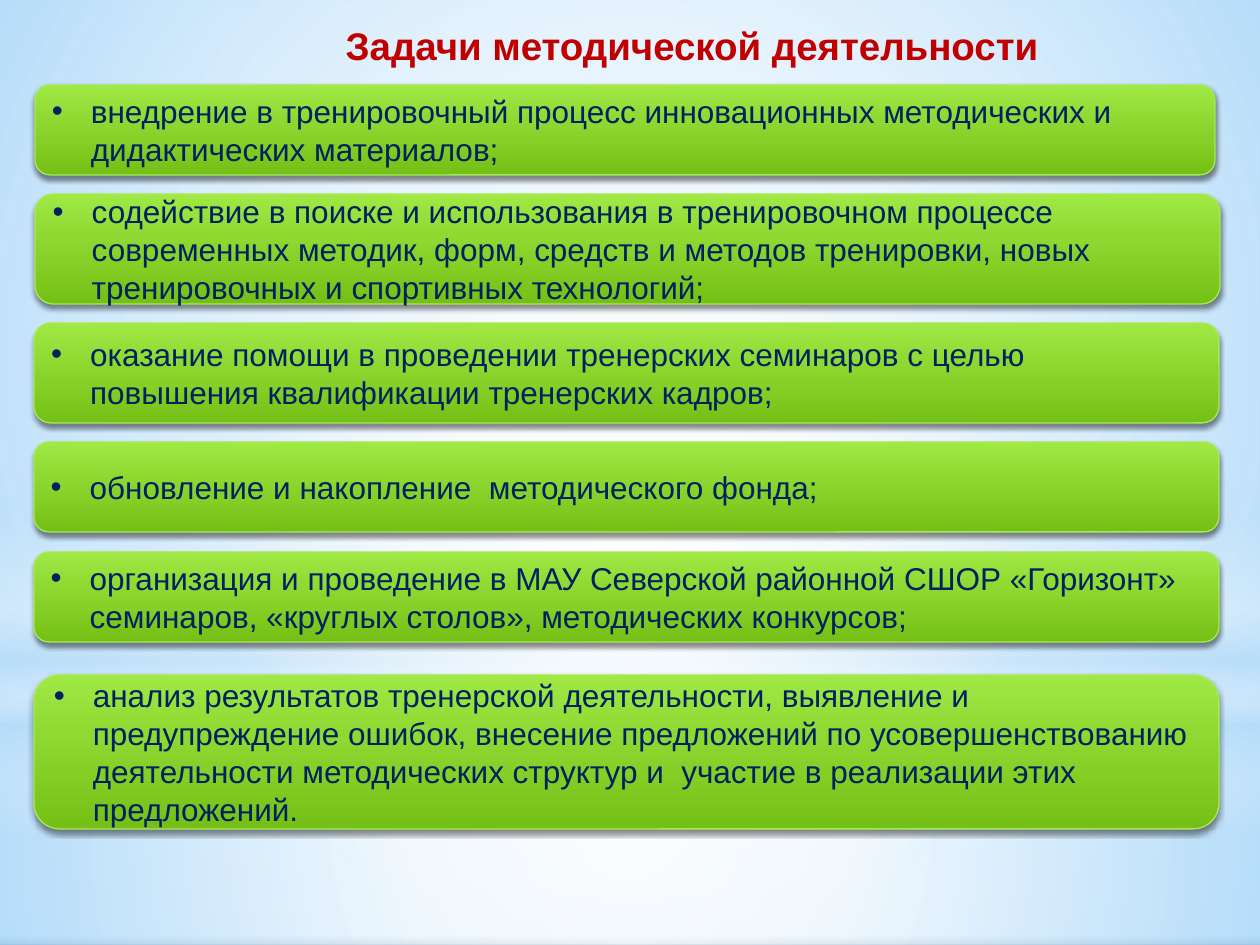
import pptx
import pptx.util
import pptx.dml.color
import pptx.enum.shapes
import pptx.enum.text
import pptx.oxml
import pptx.oxml.ns

qn = pptx.oxml.ns.qn
NS = pptx.oxml.ns.nsdecls("a")
KIND = pptx.enum.shapes.MSO_SHAPE
ALIGN = pptx.enum.text.PP_ALIGN
ANCHOR = pptx.enum.text.MSO_ANCHOR
W, H = 1260, 945

# left, top, width, height, text
TASKS = [
    (35, 85, 1180, 90, "внедрение в тренировочный процесс инновационных "
     "методических и дидактических материалов;"),
    (35, 194, 1185, 110, "содействие в поиске и использования в тренировочном "
     "процессе современных методик, форм, средств и методов тренировки, "
     "новых тренировочных и спортивных технологий;"),
    (34, 323, 1185, 100, "оказание помощи в проведении тренерских семинаров "
     "с целью повышения квалификации тренерских кадров;"),
    (34, 442, 1185, 90, "обновление и накопление  методического фонда;"),
    (34, 552, 1185, 90, "организация и проведение в МАУ Северской районной "
     "СШОР «Горизонт» семинаров, «круглых столов», методических конкурсов;"),
    (34, 675, 1185, 154, "анализ результатов тренерской деятельности, "
     "выявление и предупреждение ошибок, внесение предложений по "
     "усовершенствованию деятельности методических структур и  участие "
     "в реализации этих предложений."),
]


def px(n):
    return pptx.util.Emu(round(n * 914400 / 126))


def color(code):
    return pptx.dml.color.RGBColor.from_string(code)


def blend(fill, props, stops, round_=False):
    """Give props a gradient of (position, colour, opacity) stops in percent."""
    fill.solid()
    marks = "".join(
        f'<a:gs pos="{pos * 1000}"><a:srgbClr val="{code}">'
        f'<a:alpha val="{alpha * 1000}"/></a:srgbClr></a:gs>'
        for pos, code, alpha in stops)
    if round_:
        way = ('<a:path path="circle"><a:fillToRect l="50000" t="50000" '
               'r="50000" b="50000"/></a:path>')
    else:
        way = '<a:lin ang="5400000" scaled="0"/>'
    grad = pptx.oxml.parse_xml(
        f'<a:gradFill {NS} rotWithShape="1"><a:gsLst>{marks}</a:gsLst>'
        f'{way}</a:gradFill>')
    props.replace(props.find(qn("a:solidFill")), grad)


def shape(slide, kind, box, stops, round_=False):
    item = slide.shapes.add_shape(kind, *map(px, box))
    blend(item.fill, item.element.spPr, stops, round_)
    item.shadow.inherit = False
    return item


def scene(slide):
    """Draw the sky-blue backdrop."""
    back = slide.background.fill
    back.solid()
    blend(back, slide.element.find(".//" + qn("p:bgPr")),
          [(99, "B9DEFA", 100), (100, "6696BB", 100)])
    white, blue = "FFFFFF", "B4DCFA"
    parts = [
        (KIND.RECTANGLE, (0, 703, W, 242), True,
         [(0, white, 91), (37, white, 76), (100, blue, 79)]),
        (KIND.RECTANGLE, (0, 0, W, 703), True,
         [(0, white, 89), (48, white, 62), (100, blue, 79)]),
        (KIND.RECTANGLE, (0, 519, W, 315), False,
         [(0, white, 0), (29, white, 30), (45, blue, 40),
          (55, white, 26), (65, blue, 60), (100, white, 0)]),
        (KIND.OVAL, (0, 220, W, 703), True,
         [(0, white, 100), (56, white, 0)]),
    ]
    for kind, box, round_, stops in parts:
        shape(slide, kind, box, stops, round_).line.fill.background()


def card(slide, box, text):
    item = shape(slide, KIND.ROUNDED_RECTANGLE, box,
                 [(0, "A0E844", 100), (100, "75C016", 100)])
    item.line.color.rgb = color("A7EA52")
    item.line.width = pptx.util.Pt(0.75)
    item.element.spPr.find(qn("a:effectLst")).append(pptx.oxml.parse_xml(
        f'<a:outerShdw {NS} blurRad="39400" dist="22900" dir="5400000" '
        'rotWithShape="0"><a:srgbClr val="000000"><a:alpha val="45000"/>'
        '</a:srgbClr></a:outerShdw>'))
    frame = item.text_frame
    frame.word_wrap = True
    frame.vertical_anchor = ANCHOR.MIDDLE
    para = frame.paragraphs[0]
    para.text = text
    para.alignment = ALIGN.LEFT
    style(para, 18, "002060")
    props = para._p.get_or_add_pPr()
    props.set("marL", str(px(39)))
    props.set("indent", str(-px(39)))
    for mark in ('buFont {} typeface="Arial"', 'buChar {} char="•"'):
        props.append(pptx.oxml.parse_xml(f"<a:{mark.format(NS)}/>"))


def style(para, size, code, bold=False):
    font = para.font
    font.name = "Arial"
    font.size = pptx.util.Pt(size)
    font.bold = bold
    font.color.rgb = color(code)
    # Paragraph defaults are not always drawn, so runs carry them too.
    for run in para.runs:
        run.font.name = "Arial"
        run.font.size = pptx.util.Pt(size)
        run.font.bold = bold
        run.font.color.rgb = color(code)


def head(slide, box, text):
    title = slide.shapes.title
    title.left, title.top, title.width, title.height = map(px, box)
    frame = title.text_frame
    frame.word_wrap = False
    frame.vertical_anchor = ANCHOR.TOP
    para = frame.paragraphs[0]
    para.text = text
    para.alignment = ALIGN.LEFT
    style(para, 22, "C00000", True)
    # The title lies in front of the backdrop.
    title.element.getparent().append(title.element)


def main():
    deck = pptx.Presentation()
    deck.slide_width, deck.slide_height = px(W), px(H)
    slide = deck.slides.add_slide(deck.slide_layouts[5])
    scene(slide)
    for *box, text in TASKS:
        card(slide, box, text)
    head(slide, (333, 16, 727, 59), "Задачи методической деятельности")
    deck.save("out.pptx")


if __name__ == "__main__":
    main()
